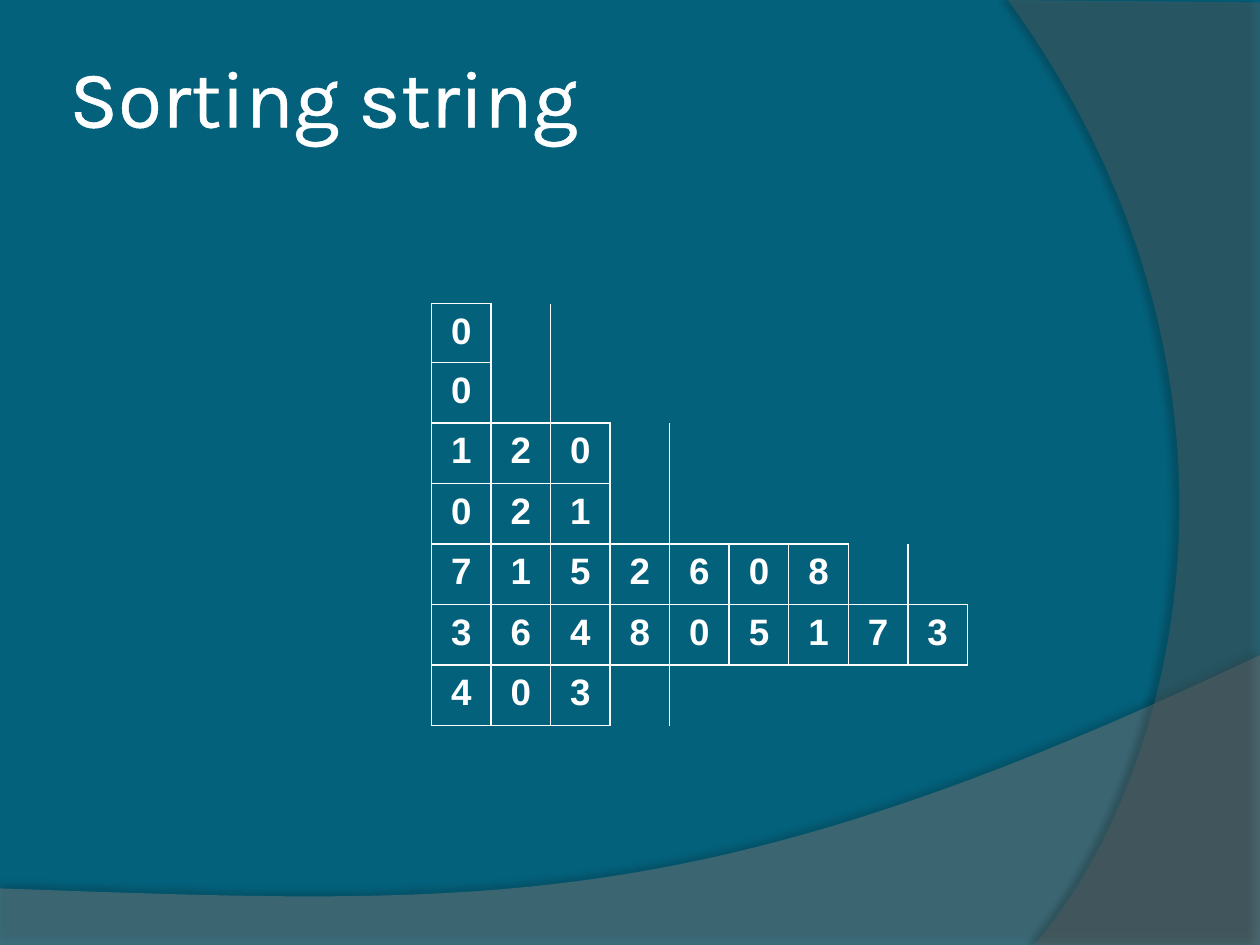
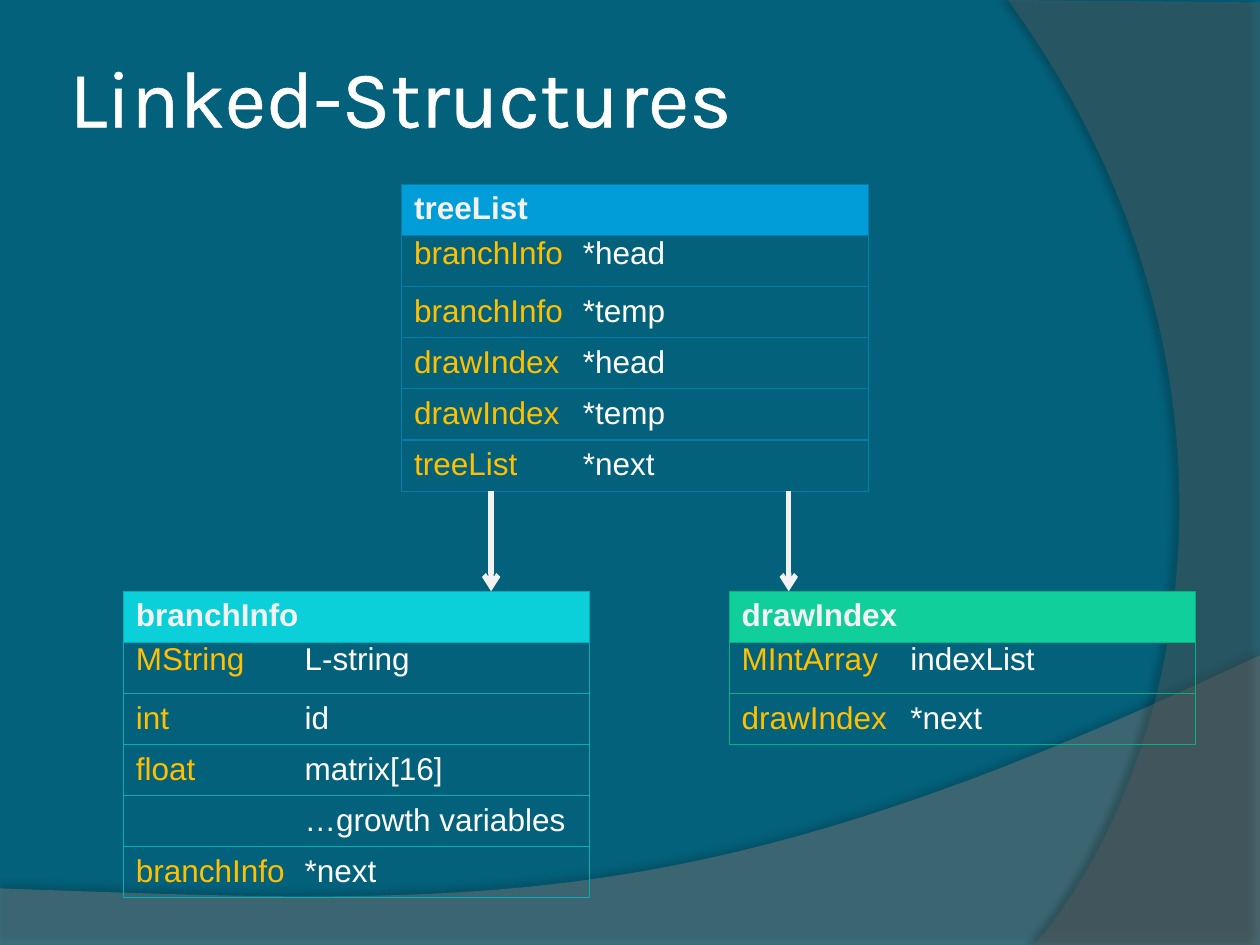
import pptx
import pptx.util
import pptx.dml.color
import pptx.enum.shapes
import pptx.enum.text
import pptx.oxml
import pptx.oxml.ns

Cm = pptx.util.Cm
Pt = pptx.util.Pt
RGBColor = pptx.dml.color.RGBColor
qn = pptx.oxml.ns.qn

TEAL = RGBColor(0x04, 0x61, 0x7B)
WHITE = RGBColor(0xFF, 0xFF, 0xFF)
PALE = RGBColor(0xF2, 0xF2, 0xF2)
AMBER = RGBColor(0xFF, 0xC0, 0x00)
BAND_GREY = RGBColor(0x7F, 0x7F, 0x7F)
SIDE_GREY = RGBColor(0x5E, 0x5E, 0x5E)
BLUE, BLUE_EDGE = RGBColor(0x00, 0x9D, 0xD9), RGBColor(0x00, 0x7E, 0xAE)
CYAN, CYAN_EDGE = RGBColor(0x0B, 0xD0, 0xD9), RGBColor(0x00, 0xAF, 0xB7)
GREEN, GREEN_EDGE = RGBColor(0x10, 0xCF, 0x9B), RGBColor(0x00, 0xB3, 0x82)

PAGE_WIDTH, PAGE_HEIGHT = 25.4, 19.05
NO_STYLE = "{2D5ABB26-0587-4C30-8999-92F81FD0307C}"
NAMESPACE = 'xmlns:a="http://schemas.openxmlformats.org/drawingml/2006/main"'

BANDS = [
    dict(corners=[(0, 19.05), (25.4, 19.05), (25.4, 13.21)],
         curve=[(14.2, 18.52), (9.93, 18.26), (0, 17.91)],
         colour=BAND_GREY, opacity=45, shade=35, distance=3.5, angle=270),
    dict(corners=[(25.4, 0.05), (25.4, 19.05), (20.85, 19.05)],
         curve=[(23.75, 15.72), (25.86, 7.62), (20.32, 0)],
         colour=SIDE_GREY, opacity=40, shade=45, distance=4, angle=180),
]

DIGIT_ROWS = ["0", "0", "120", "021", "7152608", "364805173", "403"]
DIGIT_LEFT, DIGIT_TOP = 8.7, 6.12
DIGIT_WIDTH, DIGIT_HEIGHT, FIRST_DIGIT_HEIGHT = 1.2, 1.22, 1.12

STRUCTURES = [
    dict(name="branchInfo", left=2.49, top=11.92, fill=CYAN, edge=CYAN_EDGE,
         fields=[("MString", "L-string"), ("int", "id"), ("float", "matrix[16]"),
                 ("", "…growth variables"), ("branchInfo", "*next")]),
    dict(name="drawIndex", left=14.7, top=11.92, fill=GREEN, edge=GREEN_EDGE,
         fields=[("MIntArray", "indexList"), ("drawIndex", "*next")]),
    dict(name="treeList", left=8.1, top=3.72, fill=BLUE, edge=BLUE_EDGE,
         fields=[("branchInfo", "*head"), ("branchInfo", "*temp"),
                 ("drawIndex", "*head"), ("drawIndex", "*temp"),
                 ("treeList", "*next")]),
]
FRAME_WIDTH, ROW_HEIGHT = 9.4, 1.03
FIELD_DROP, FIRST_FIELD_HEIGHT = 0.9, 1.17
TYPE_WIDTH, MEMBER_SHIFT, MEMBER_WIDTH = 3.6, 3.4, 6.2
ARROW_COLUMNS = [9.9, 15.9]
ARROW_TOP, ARROW_BOTTOM = 9.9, 11.92


def xml(text):
    return pptx.oxml.parse_xml(text.replace(">", f" {NAMESPACE}>", 1))


def write(frame, text, size=18, font="Arial", colour=WHITE, bold=False,
          centred=False, outline=None):
    para = frame.paragraphs[0]
    if centred:
        para.alignment = pptx.enum.text.PP_ALIGN.CENTER
    span = para.add_run()
    span.text = text
    span.font.size = Pt(size)
    span.font.name = font
    span.font.bold = bold
    span.font.color.rgb = colour
    if outline:
        span.font._element.insert(0, xml(
            f'<a:ln w="{Pt(outline)}"><a:solidFill><a:srgbClr val="{colour}"/>'
            '</a:solidFill></a:ln>'))


def curve_points(start, first, second, end, steps=60):
    for step in range(1, steps + 1):
        t = step / steps
        yield tuple(
            (1 - t) ** 3 * a + 3 * (1 - t) ** 2 * t * b + 3 * (1 - t) * t ** 2 * c + t ** 3 * d
            for a, b, c, d in zip(start, first, second, end))


def add_band(page, corners, curve, colour, opacity, shade, distance, angle):
    points = [*corners, *curve_points(corners[-1], *curve)]
    points = [(Cm(x), Cm(y)) for x, y in points]
    builder = page.shapes.build_freeform(*points[0])
    builder.add_line_segments(points[1:], close=True)
    band = builder.convert_to_shape()
    band.line.fill.background()
    band.fill.solid()
    band.fill.fore_color.rgb = colour
    band.shadow.inherit = False
    properties = band._element.spPr
    tint = properties.find(qn("a:solidFill")).find(qn("a:srgbClr"))
    tint.append(xml(f'<a:alpha val="{opacity * 1000}"></a:alpha>'))
    properties.find(qn("a:effectLst")).append(xml(
        f'<a:outerShdw blurRad="{Pt(4)}" dist="{Pt(distance)}" dir="{angle * 60000}" '
        f'rotWithShape="0"><a:srgbClr val="000000"><a:alpha val="{shade * 1000}"/>'
        '</a:srgbClr></a:outerShdw>'))


def add_page(deck, title):
    page = deck.slides.add_slide(deck.slide_layouts[6])
    page.background.fill.solid()
    page.background.fill.fore_color.rgb = TEAL
    for band in BANDS:
        add_band(page, **band)
    box = page.shapes.add_textbox(Cm(1.27), Cm(0.33), Cm(20.75), Cm(3.18))
    frame = box.text_frame
    frame.word_wrap = True
    frame.vertical_anchor = pptx.enum.text.MSO_ANCHOR.MIDDLE
    frame.margin_left = frame.margin_right = Cm(0.13)
    write(frame, title, size=46, font="Karla", outline=1.45)
    return page


def add_grid(page, left, top, widths, heights, rows, edge=None, weight=1,
             margins=(0.25, 0.13), **text_format):
    graphic = page.shapes.add_table(len(heights), len(widths), Cm(left), Cm(top),
                                    Cm(sum(widths)), Cm(sum(heights)))
    table = graphic.table
    table._tbl.tblPr.find(qn("a:tableStyleId")).text = NO_STYLE
    table.first_row = table.horz_banding = False
    for column, width in zip(table.columns, widths):
        column.width = Cm(width)
    for row, height in zip(table.rows, heights):
        row.height = Cm(height)

    def used(r, c):
        return 0 <= r < len(rows) and 0 <= c < len(rows[r])

    for r in range(len(heights)):
        for c in range(len(widths)):
            cell = table.cell(r, c)
            cell.fill.background()
            if used(r, c) and rows[r][c]:
                cell.margin_left = cell.margin_right = Cm(margins[0])
                cell.margin_top = cell.margin_bottom = Cm(margins[1])
                write(cell.text_frame, rows[r][c], **text_format)
            if edge is None:
                continue
            neighbours = {"L": (r, c - 1), "R": (r, c + 1), "T": (r - 1, c), "B": (r + 1, c)}
            sides = [side for side, place in neighbours.items()
                     if used(r, c) or used(*place)]
            for index, side in enumerate(sides):
                cell._tc.tcPr.insert(index, xml(
                    f'<a:ln{side} w="{Pt(weight)}"><a:solidFill><a:srgbClr val="{edge}"/>'
                    f'</a:solidFill></a:ln{side}>'))
    return table


def add_structure(page, name, left, top, fill, edge, fields):
    count = len(fields)
    frame = add_grid(page, left, top, [FRAME_WIDTH], [ROW_HEIGHT] * (count + 1),
                     [[name]] + [[""]] * count, edge=edge, weight=0.75,
                     colour=PALE, bold=True)
    header = frame.cell(0, 0)
    header.fill.solid()
    header.fill.fore_color.rgb = fill
    heights = [FIRST_FIELD_HEIGHT] + [ROW_HEIGHT] * (count - 1)
    types, members = zip(*fields)
    for shift, width, texts, colour in [(0, TYPE_WIDTH, types, AMBER),
                                        (MEMBER_SHIFT, MEMBER_WIDTH, members, WHITE)]:
        add_grid(page, left + shift, top + FIELD_DROP, [width], heights,
                 [[text] for text in texts], colour=colour)


def add_arrow(page, x):
    arrow = page.shapes.add_connector(pptx.enum.shapes.MSO_CONNECTOR.STRAIGHT,
                                      Cm(x), Cm(ARROW_TOP), Cm(x), Cm(ARROW_BOTTOM))
    arrow.line.color.rgb = PALE
    arrow.line.width = Pt(3)
    arrow.line._get_or_add_ln().append(xml('<a:tailEnd type="arrow"></a:tailEnd>'))
    arrow._element.spPr.append(xml('<a:effectLst></a:effectLst>'))


def main():
    deck = pptx.Presentation()
    deck.slide_width, deck.slide_height = Cm(PAGE_WIDTH), Cm(PAGE_HEIGHT)

    sorting = add_page(deck, "Sorting string")
    add_grid(sorting, DIGIT_LEFT, DIGIT_TOP,
             [DIGIT_WIDTH] * max(map(len, DIGIT_ROWS)),
             [FIRST_DIGIT_HEIGHT] + [DIGIT_HEIGHT] * (len(DIGIT_ROWS) - 1),
             DIGIT_ROWS, edge=WHITE, margins=(0.3, 0.15),
             size=21, bold=True, centred=True)

    linked = add_page(deck, "Linked-Structures")
    for structure in STRUCTURES:
        add_structure(linked, **structure)
    for x in ARROW_COLUMNS:
        add_arrow(linked, x)

    deck.save("out.pptx")


if __name__ == "__main__":
    main()
